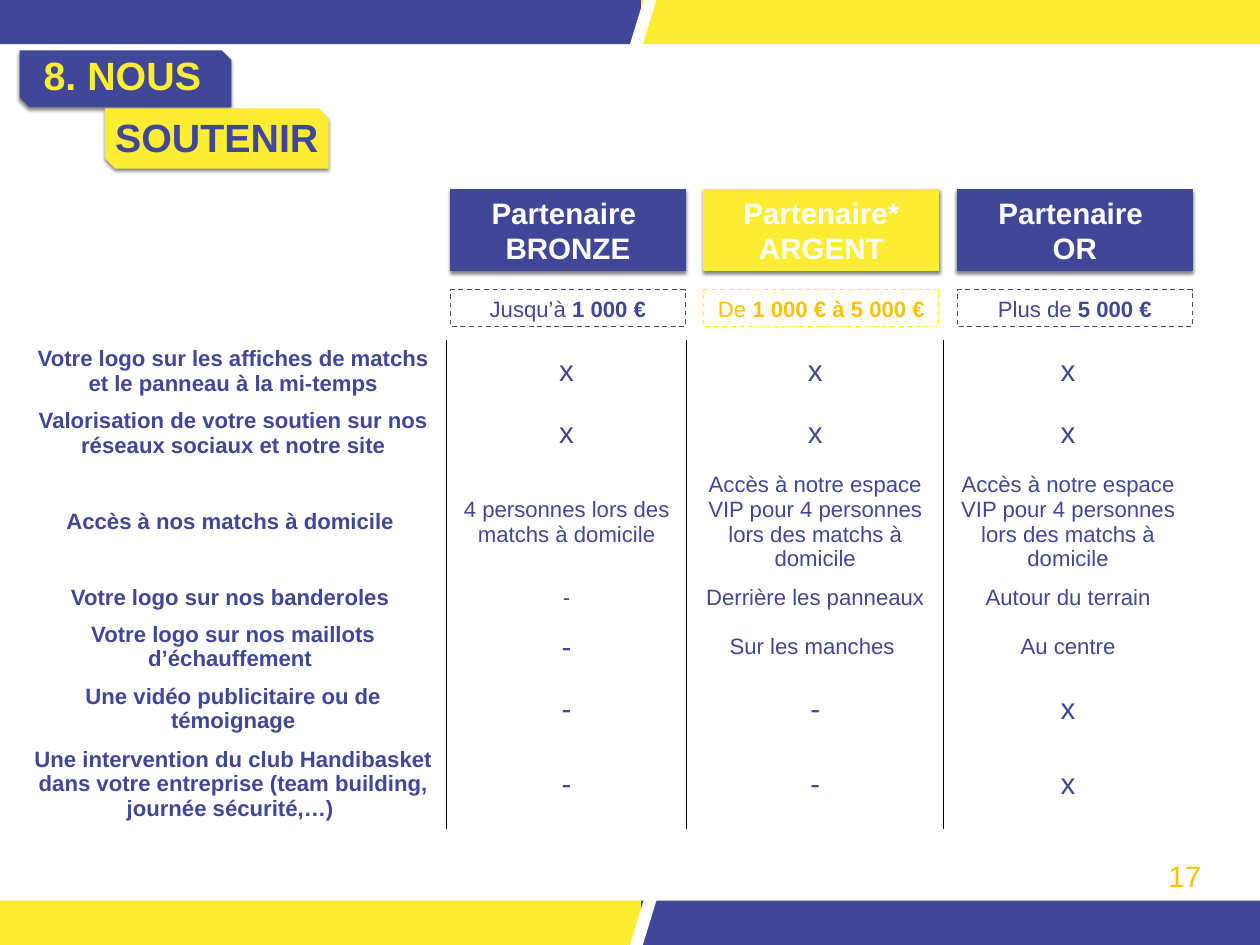
from lxml import etree
from pptx import Presentation
from pptx import util as u
from pptx.dml import color
from pptx.enum import dml, shapes, text
from pptx.oxml import ns

Pt = u.Pt
BLUE, YELLOW, GOLD, WHITE, BLACK = "414798", "FCED33", "FFC000", "FFFFFF", "000000"
KINDS = shapes.MSO_SHAPE
NO_STYLE = "{2D5ABB26-0587-4C30-8999-92F81FD0307C}"


def rgb(code):
    return color.RGBColor.from_string(code)


def add(node, tag, **attrs):
    """Append a child such as a:ln to an XML node."""
    child = etree.SubElement(node, ns.qn(tag))
    for key, value in attrs.items():
        child.set(key, str(value))
    return child


def write(frame, lines, size=18, ink=BLUE, bold=False, font="Arial",
          inset=4.5, space=None, wrap=True, anchor=text.MSO_ANCHOR.MIDDLE):
    """Fill a frame; each line is a list of runs, and a run in a tuple is bold."""
    frame.word_wrap = wrap
    frame.vertical_anchor = anchor
    frame.margin_left = frame.margin_right = Pt(inset)
    frame.margin_top = frame.margin_bottom = Pt(min(inset, 4.5))
    for i, runs in enumerate(lines):
        para = frame.add_paragraph() if i else frame.paragraphs[0]
        para.alignment = text.PP_ALIGN.CENTER
        if space:
            para.line_spacing = space
        for part in runs:
            run = para.add_run()
            strong = isinstance(part, tuple)
            run.text = part[0] if strong else part
            run.font.name, run.font.size = font, Pt(size)
            run.font.bold = bold or strong
            run.font.color.rgb = rgb(ink)


class Page:
    def __init__(self, deck):
        self.slide = deck.slides.add_slide(deck.slide_layouts[6])
        self.items = self.slide.shapes

    def shape(self, box, fill=None, line=None, kind=KINDS.RECTANGLE,
              dash=False, shade=False, turn=0):
        item = self.items.add_shape(kind, *map(Pt, box))
        item.shadow.inherit = False
        item.rotation = turn
        if fill:
            item.fill.solid()
            item.fill.fore_color.rgb = rgb(fill)
        else:
            item.fill.background()
        if line:
            item.line.color.rgb = rgb(line)
            item.line.width = Pt(1)
            if dash:
                item.line.dash_style = dml.MSO_LINE.DASH
        else:
            item.line.fill.background()
        if shade:
            glow = item._element.spPr.find(ns.qn("a:effectLst"))
            cast = add(glow, "a:outerShdw", blurRad=Pt(3), dist=Pt(2),
                       dir=5400000, rotWithShape=0)
            add(add(cast, "a:srgbClr", val=BLACK), "a:alpha", val=50000)
        return item

    def label(self, box, words, **style):
        item = self.items.add_textbox(*map(Pt, box))
        write(item.text_frame, [[words]], **style)

    def band(self, top, left, right):
        """Two-colour band cut by a slanted white stripe."""
        self.shape((0, top, 521, 36), left)
        self.shape((521, top, 503, 36), right)
        self.shape((518, top - 27.5, 10, 89), WHITE, turn=17)

    def title(self, words, box, frame, fill, ink):
        tag = self.shape(box, fill, kind=KINDS.SNIP_2_DIAG_RECTANGLE, shade=True)
        tag.adjustments[0], tag.adjustments[1] = 0, 0.167
        self.label(frame, words, size=32, ink=ink, bold=True, space=0.8)

    def offer(self, left, name, price, hue, ink):
        """Partner heading with its dashed price box below."""
        head = self.shape((left, 154, 191, 66), hue, hue, shade=True)
        write(head.text_frame, name, size=24, ink=WHITE, bold=True)
        cost = self.shape((left, 235.5, 191, 30), line=hue, dash=True)
        write(cost.text_frame, [price], ink=ink)

    def table(self, left, top, widths, rows):
        """Each row is a height, a heading and its cells."""
        high = sum(row[0] for row in rows)
        grid = self.items.add_table(len(rows), len(widths), Pt(left), Pt(top),
                                    Pt(sum(widths)), Pt(high)).table
        grid.first_row = grid.horz_banding = False
        grid._tbl.tblPr.find(ns.qn("a:tableStyleId")).text = NO_STYLE
        for col, width in zip(grid.columns, widths):
            col.width = Pt(width)
        for r, (height, *cells) in enumerate(rows):
            grid.rows[r].height = Pt(height)
            for c, words in enumerate(cells):
                cell = grid.cell(r, c)
                mark = len(words) == 1 and height > 30
                write(cell.text_frame, [[words]], size=24 if mark else 18, bold=c == 0)
                cell.vertical_anchor = text.MSO_ANCHOR.MIDDLE
                cell.margin_left = cell.margin_right = Pt(7.2)
                cell.margin_top = cell.margin_bottom = Pt(3.6)
                self.rule(cell, c > 0, c < len(widths) - 1)
                cell.fill.background()

    def rule(self, cell, left, right):
        """Draw the side borders of a cell."""
        props = cell._tc.get_or_add_tcPr()
        for tag, shown in (("a:lnL", left), ("a:lnR", right)):
            if shown:
                edge = add(props, tag, w=Pt(1))
                add(add(edge, "a:solidFill"), "a:srgbClr", val=BLACK)


def main():
    deck = Presentation()
    deck.slide_width, deck.slide_height = Pt(1024), Pt(768)
    page = Page(deck)
    page.band(0, BLUE, YELLOW)
    page.band(732, YELLOW, BLUE)
    page.label((942.5, 694, 41, 42), "17", size=24, ink=GOLD, inset=3.6,
               wrap=False, anchor=text.MSO_ANCHOR.TOP)

    page.title("8. NOUS", (16, 41, 172, 46), (16, 41, 167, 46), BLUE, YELLOW)
    page.title("SOUTENIR", (85.5, 88, 181.5, 49), (85.5, 93.5, 181.5, 43), YELLOW, BLUE)

    offers = [
        ([["Partenaire "], ["BRONZE"]], ["Jusqu’à ", ("1 000 €",)], BLUE, BLUE),
        ([["Partenaire* ARGENT"]], ["De ", ("1 000 € à 5 000 €",)], YELLOW, GOLD),
        ([["Partenaire "], ["OR"]], ["Plus de ", ("5 000 €",)], BLUE, BLUE),
    ]
    for i, offer in enumerate(offers):
        page.offer(366 + 206 * i, *offer)

    lounge = "Accès à notre espace VIP pour 4 personnes lors des matchs à domicile"
    page.table(16, 276.5, (347, 195, 209, 202), [
        (47, "Votre logo sur les affiches de matchs et le panneau à la mi-temps",
         "x", "x", "x"),
        (47, "Valorisation de votre soutien sur nos réseaux sociaux et notre site",
         "x", "x", "x"),
        (88, "Accès à nos matchs à domicile ",
         "4 personnes lors des matchs à domicile", lounge, lounge),
        (29.5, "Votre logo sur nos banderoles ",
         "-", "Derrière les panneaux", "Autour du terrain"),
        (47, "Votre logo sur nos maillots d’échauffement ",
         "-", "Sur les manches ", "Au centre"),
        (47, "Une vidéo publicitaire ou de témoignage", "-", "-", "x"),
        (68, "Une intervention du club Handibasket dans votre entreprise "
             "(team building, journée sécurité,…) ", "-", "-", "x"),
    ])
    deck.save("out.pptx")


if __name__ == "__main__":
    main()
